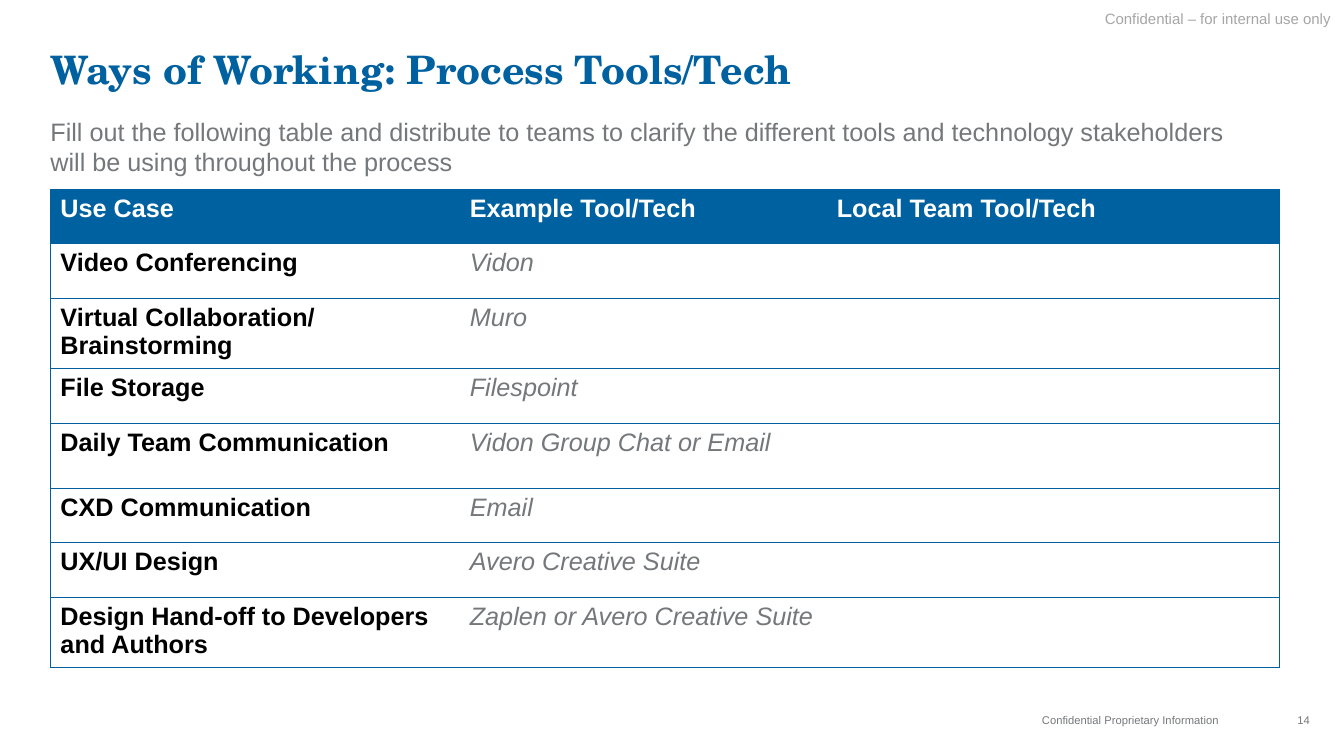
from dataclasses import dataclass

from lxml import etree
from pptx import Presentation
from pptx.dml.color import RGBColor
from pptx.enum.text import MSO_ANCHOR, PP_ALIGN
from pptx.oxml.ns import qn
from pptx.slide import Slide
from pptx.table import _Cell
from pptx.util import Inches, Pt

LEFT, CENTER, RIGHT = PP_ALIGN.LEFT, PP_ALIGN.CENTER, PP_ALIGN.RIGHT
TOP, MIDDLE = MSO_ANCHOR.TOP, MSO_ANCHOR.MIDDLE
WIDE, HIGH = 13.33, 7.5
BLUE, EDGE, GREY, PALE = "0061A0", "005F9C", "75787B", "A6A6A6"
WHITE, BLACK = "FFFFFF", "000000"
SANS, SERIF = "Arial", "TeX Gyre Schola"


@dataclass(frozen=True)
class Style:
    size: float
    color: str
    font: str = SANS
    bold: bool = False
    slant: bool = False


@dataclass(frozen=True)
class Label:
    text: str
    area: tuple[float, float, float, float]
    style: Style
    align: PP_ALIGN = LEFT
    anchor: MSO_ANCHOR = TOP
    pad: tuple[float, float] = (0, 0)
    lead: float = 1.0


SMALL = Style(8, GREY)
HEAD = Style(18, WHITE, bold=True)
CASE = Style(18, BLACK, bold=True)
TOOL = Style(18, GREY, slant=True)

LABELS = [
    Label("14", (94, 93.6, 6, 3.33), SMALL, CENTER, MIDDLE, (0.1, 0.05)),
    Label("Confidential Proprietary Information", (67.44, 93.6, 24, 3.33),
          SMALL, RIGHT, MIDDLE, (0.1, 0.05)),
    Label("Confidential – for internal use only", (69.47, 1.47, 30.53, 3.07),
          Style(10.7, PALE), RIGHT, pad=(0.13, 0), lead=0.9),
    Label("Ways of Working: Process Tools/Tech", (3.75, 6.67, 77.57, 10.67),
          Style(28, BLUE, SERIF, True), lead=0.9),
    Label("Fill out the following table and distribute to teams to clarify the "
          "different tools and technology stakeholders will be using "
          "throughout the process", (3.75, 15.33, 90.32, 3.87), Style(18, GREY)),
]

COLS = (30.46, 27.31, 33.68)
LOW, TALL = 7.2, 8.6
ROWS = [
    (LOW, "Use Case", "Example Tool/Tech", "Local Team Tool/Tech"),
    (LOW, "Video Conferencing", "Vidon", ""),
    (TALL, "Virtual Collaboration/ Brainstorming", "Muro", ""),
    (LOW, "File Storage", "Filespoint", ""),
    (TALL, "Daily Team Communication", "Vidon Group Chat or Email", ""),
    (LOW, "CXD Communication", "Email", ""),
    (LOW, "UX/UI Design", "Avero Creative Suite", ""),
    (TALL, "Design Hand-off to Developers and Authors",
     "Zaplen or Avero Creative Suite", ""),
]


def across(share: float) -> int:
    """Turn a percentage of the slide width into a length."""
    return Inches(WIDE * share / 100)


def down(share: float) -> int:
    """Turn a percentage of the slide height into a length."""
    return Inches(HIGH * share / 100)


def paint(target, color: str) -> None:
    """Give a fill or font colour format a hex colour."""
    target.rgb = RGBColor.from_string(color)


def write(para, text: str, style: Style) -> None:
    """Add one styled run to a paragraph."""
    run = para.add_run()
    run.text = text
    font = run.font
    font.name, font.size = style.font, Pt(style.size)
    font.bold, font.italic = style.bold, style.slant
    paint(font.color, style.color)


def place(slide: Slide, label: Label) -> None:
    """Draw one text box."""
    x, y, w, h = label.area
    frame = slide.shapes.add_textbox(across(x), down(y), across(w), down(h)).text_frame
    frame.word_wrap = True
    frame.vertical_anchor = label.anchor
    frame.margin_left = frame.margin_right = Inches(label.pad[0])
    frame.margin_top = frame.margin_bottom = Inches(label.pad[1])
    para = frame.paragraphs[0]
    para.alignment, para.line_spacing = label.align, label.lead
    write(para, label.text, label.style)


def frame(cell: _Cell, sides: str) -> None:
    """Rule the named sides of a cell and clear the others."""
    props = cell._tc.get_or_add_tcPr()
    for side in "LRTB":
        line = etree.SubElement(props, qn(f"a:ln{side}"), w=str(Pt(0.75)))
        if side in sides:
            fill = etree.SubElement(line, qn("a:solidFill"))
            etree.SubElement(fill, qn("a:srgbClr"), val=EDGE)
        else:
            etree.SubElement(line, qn("a:noFill"))


def tabulate(slide: Slide) -> None:
    """Draw the table of use cases and tools."""
    high = sum(row[0] for row in ROWS)
    table = slide.shapes.add_table(
        len(ROWS), len(COLS), across(3.75), down(25.07),
        across(sum(COLS)), down(high)).table
    table.horz_banding = table.first_row = False
    for col, share in zip(table.columns, COLS):
        col.width = across(share)
    for r, (share, *texts) in enumerate(ROWS):
        table.rows[r].height = down(share)
        for c, text in enumerate(texts):
            cell = table.cell(r, c)
            frame(cell, "TB" + {0: "L", len(COLS) - 1: "R"}.get(c, ""))
            cell.fill.solid()
            paint(cell.fill.fore_color, WHITE if r else BLUE)
            if text:
                style = HEAD if r == 0 else TOOL if c else CASE
                write(cell.text_frame.paragraphs[0], text, style)


def main() -> None:
    """Build and save the slide."""
    deck = Presentation()
    deck.slide_width, deck.slide_height = Inches(WIDE), Inches(HIGH)
    slide = deck.slides.add_slide(deck.slide_layouts[6])
    for label in LABELS[:-1]:
        place(slide, label)
    tabulate(slide)
    place(slide, LABELS[-1])
    deck.save("out.pptx")


if __name__ == "__main__":
    main()
